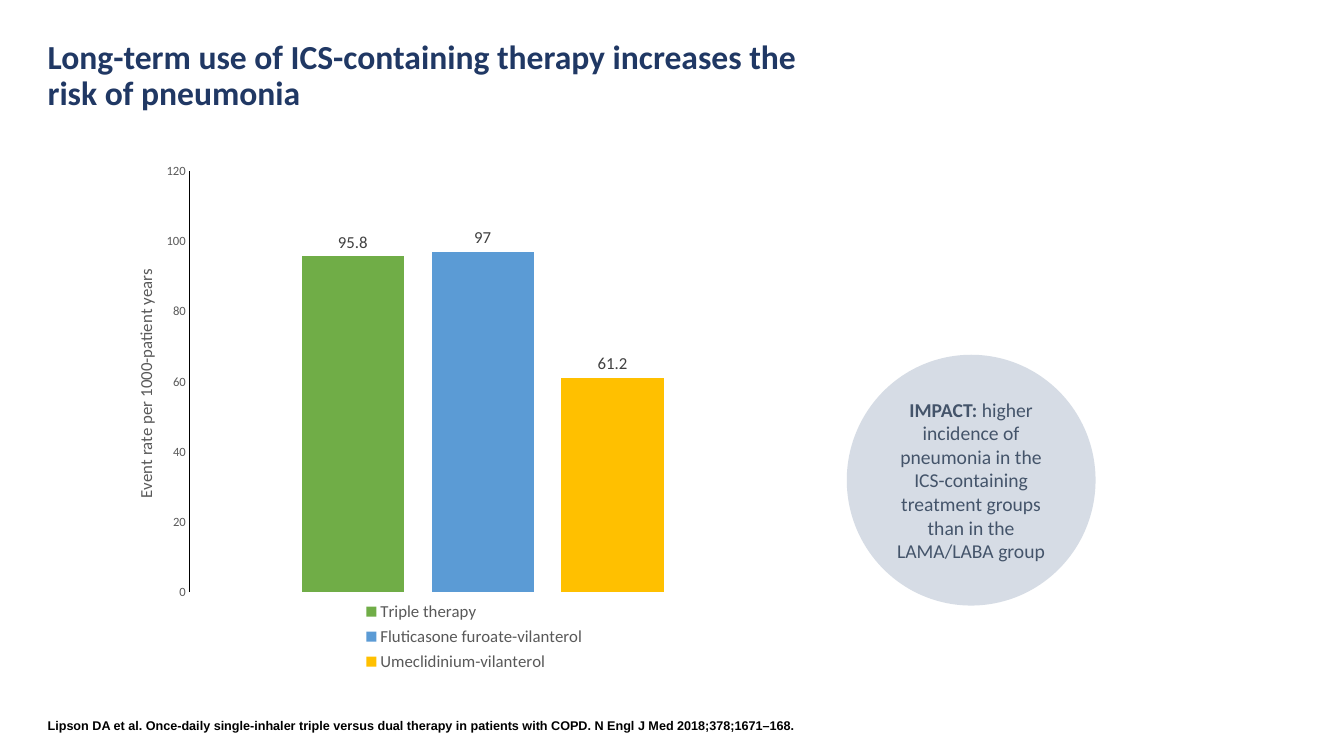
from pptx import Presentation
from pptx.chart.data import CategoryChartData
from pptx.dml.color import RGBColor
from pptx.enum.chart import XL_CHART_TYPE, XL_LABEL_POSITION, XL_LEGEND_POSITION, XL_TICK_MARK
from pptx.enum.shapes import MSO_SHAPE
from pptx.enum.text import MSO_ANCHOR, MSO_AUTO_SIZE, PP_ALIGN
from pptx.oxml import parse_xml
from pptx.oxml.ns import nsdecls, qn
from pptx.util import Cm, Pt

COLUMN = XL_CHART_TYPE.COLUMN_CLUSTERED
OUTSIDE = XL_LABEL_POSITION.OUTSIDE_END
BOTTOM = XL_LEGEND_POSITION.BOTTOM
NO_TICK = XL_TICK_MARK.NONE
CENTER = PP_ALIGN.CENTER
COLORS = {
    "title": "203864", "black": "000000", "axis": "595959", "label": "404040",
    "circle": "D6DCE5", "impact": "44546A",
    "triple": "70AD47", "fluticasone": "5B9BD5", "umeclidinium": "FFC000",
}
GROUPS = [
    ("Triple therapy", 95.8, "triple"),
    ("Fluticasone furoate-vilanterol", 97, "fluticasone"),
    ("Umeclidinium-vilanterol", 61.2, "umeclidinium"),
]


def style(font, size, color, bold=False, name="Calibri"):
    font.name = name
    font.size = Pt(size)
    font.bold = bold
    font.color.rgb = RGBColor.from_string(COLORS[color])


def set_layout(parent, index, target="", **values):
    for old in parent.findall(qn("c:layout")):
        parent.remove(old)
    inner = f'<c:layoutTarget val="{target}"/>' if target else ""
    inner += "".join(f'<c:{key}Mode val="edge"/>' for key in "xy")
    inner += "".join(f'<c:{key} val="{val}"/>' for key, val in values.items())
    parent.insert(index, parse_xml(
        f'<c:layout {nsdecls("c")}><c:manualLayout>{inner}</c:manualLayout></c:layout>'))


prs = Presentation()
prs.slide_width, prs.slide_height = Cm(33.87), Cm(19.05)
s = prs.slides.add_slide(prs.slide_layouts[1])

title, source = s.shapes.title, s.placeholders[1]
title.text_frame.text = "Long-term use of ICS-containing therapy increases the \vrisk of pneumonia"
source.text_frame.text = (
    "Lipson DA et al. Once-daily single-inhaler triple versus dual therapy "
    "in patients with COPD. N Engl J Med 2018;378;1671–168.")
pPr = source.text_frame.paragraphs[0]._p.get_or_add_pPr()
pPr.set("marL", "0")
pPr.set("indent", "0")
pPr.append(parse_xml(f'<a:buNone {nsdecls("a")}/>'))
for sp, top, height, anchor, size, color, name in [
    (title, 1.02, 3.68, MSO_ANCHOR.TOP, 24, "title", "Calibri"),
    (source, 17.25, 1.24, MSO_ANCHOR.BOTTOM, 9, "black", "Arial"),
]:
    sp.left, sp.top, sp.width, sp.height = Cm(1.2), Cm(top), Cm(31.47), Cm(height)
    tf = sp.text_frame
    tf.margin_left = tf.margin_top = tf.margin_right = tf.margin_bottom = 0
    tf.auto_size = MSO_AUTO_SIZE.NONE
    tf.vertical_anchor = anchor
    tf.word_wrap = True
    p = tf.paragraphs[0]
    p.alignment = PP_ALIGN.LEFT
    p.line_spacing = 0.9
    p.space_before = Pt(0)
    for r in p.runs:
        style(r.font, size, color, True, name)

data = CategoryChartData()
data.categories = ["1"]
for name, rate, color in GROUPS:
    data.add_series(name, [rate])
chart = s.shapes.add_chart(COLUMN, Cm(1.85), Cm(3.61), Cm(18.21), Cm(13.44), data).chart
style(chart.font, 10, "black")
chart.has_title = False
plot = chart.plots[0]
plot.gap_width, plot.overlap = 219, -27
plot.vary_by_categories = False
for series, (name, rate, color) in zip(plot.series, GROUPS):
    series.format.fill.solid()
    series.format.fill.fore_color.rgb = RGBColor.from_string(COLORS[color])
    labels = series.data_labels
    labels.show_value = True
    labels.position = OUTSIDE
    style(labels.font, 12, "label")

chart.category_axis.visible = False
axis = chart.value_axis
axis.minimum_scale, axis.maximum_scale, axis.major_unit = 0, 120, 20
axis.has_major_gridlines = False
axis.major_tick_mark = axis.minor_tick_mark = NO_TICK
axis.format.line.color.rgb = RGBColor.from_string(COLORS["black"])
axis.format.line.width = Pt(0.75)
style(axis.tick_labels.font, 9, "axis")
axis_title = axis.axis_title
axis_title.text_frame.text = "Event rate per 1000-patient years"
style(axis_title.text_frame.paragraphs[0].runs[0].font, 12, "axis")

chart.has_legend = True
legend = chart.legend
legend.position = BOTTOM
legend.include_in_layout = False
style(legend.font, 12, "axis")

set_layout(chart._chartSpace.chart.plotArea, 0, "inner", x=0.161, y=0.053, w=0.811, h=0.789)
set_layout(axis_title._element, 1, x=0.08, y=0.23)
set_layout(legend._element, 1, x=0.39, y=0.85, w=0.33, h=0.15)

circle = s.shapes.add_shape(MSO_SHAPE.OVAL, Cm(21.34), Cm(8.94), Cm(6.27), Cm(6.32))
circle.shadow.inherit = False
circle.fill.solid()
circle.fill.fore_color.rgb = RGBColor.from_string(COLORS["circle"])
circle.line.fill.background()
tf = circle.text_frame
tf.word_wrap = True
tf.vertical_anchor = MSO_ANCHOR.MIDDLE
p = tf.paragraphs[0]
p.alignment = CENTER
for text, bold in [
    ("IMPACT: ", True),
    ("higher incidence of pneumonia in the ICS-containing treatment groups "
     "than in the LAMA/LABA group", False),
]:
    r = p.add_run()
    r.text = text
    style(r.font, 14, "impact", bold)

prs.save("out.pptx")
